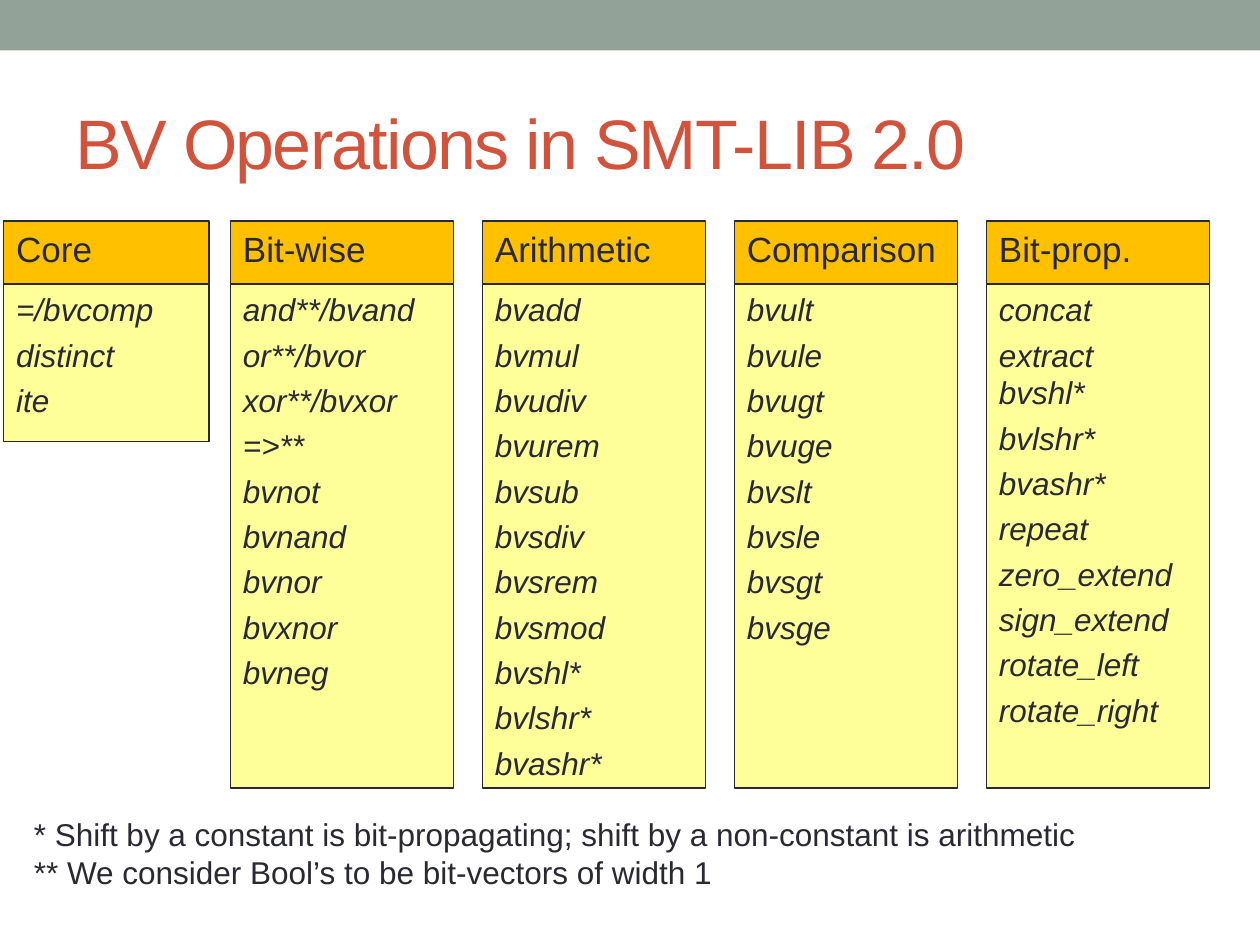
from pptx import Presentation
from pptx import util as u
from pptx.dml.color import RGBColor
from pptx.enum import shapes, text

TITLE = "BV Operations in SMT-LIB 2.0"
# heading, operations ("\v" is a line break inside a paragraph)
GROUPS = [
    ("Core", ["=/bvcomp", "distinct", "ite"]),
    ("Bit-wise", ["and**/bvand", "or**/bvor", "xor**/bvxor", "=>**", "bvnot",
                  "bvnand", "bvnor", "bvxnor", "bvneg"]),
    ("Arithmetic", ["bvadd", "bvmul", "bvudiv", "bvurem", "bvsub", "bvsdiv",
                    "bvsrem", "bvsmod", "bvshl*", "bvlshr*", "bvashr*"]),
    ("Comparison", ["bvult", "bvule", "bvugt", "bvuge", "bvslt", "bvsle",
                    "bvsgt", "bvsge"]),
    ("Bit-prop.", ["concat", "extract\vbvshl*", "bvlshr*", "bvashr*", "repeat",
                   "zero_extend", "sign_extend", "rotate_left", "rotate_right"]),
]
FOOTNOTES = ("* Shift by a constant is bit-propagating; shift by a non-constant is arithmetic\v"
             "** We consider Bool’s to be bit-vectors of width 1")

COLORS = {"band": "93A299", "title": "D2533C", "ink": "292934",
          "heading": "FFC000", "list": "FFFF99"}
WIDTH, HEIGHT = 10, 7.5
COLUMN_WIDTH, COLUMN_STEP, FIRST_COLUMN = 1.77, 2.0, -0.17
CORE_LEFT, CORE_WIDTH, CORE_HEIGHT = 0.03, 1.63, 1.25
HEADING_TOP, HEADING_HEIGHT, LIST_HEIGHT = 1.755, 0.5, 4


def color(name):
    return RGBColor.from_string(COLORS[name])


def write(shape, paragraphs, size=18, ink="ink", italic=False, before=0,
          anchor=text.MSO_ANCHOR.TOP, tracking=0):
    frame = shape.text_frame
    frame.word_wrap = True
    frame.auto_size = text.MSO_AUTO_SIZE.NONE
    frame.vertical_anchor = anchor
    for index, content in enumerate(paragraphs):
        paragraph = frame.paragraphs[0] if index == 0 else frame.add_paragraph()
        paragraph.text = content
        paragraph.alignment = text.PP_ALIGN.LEFT
        paragraph.space_before = u.Pt(before)
        for run in paragraph.runs:
            run.font.name = "Arial"
            run.font.size = u.Pt(size)
            run.font.italic = italic
            run.font.color.rgb = color(ink)
            if tracking:
                run.font._element.set("spc", str(tracking * 100))


def add_box(slide, left, top, width, height, fill, outlined=True):
    box = slide.shapes.add_shape(shapes.MSO_SHAPE.RECTANGLE,
                                 *map(u.Inches, (left, top, width, height)))
    box.shadow.inherit = False
    box.fill.solid()
    box.fill.fore_color.rgb = color(fill)
    if outlined:
        box.line.color.rgb = color("ink")
        box.line.width = u.Pt(0.75)
    else:
        box.line.fill.background()
    return box


def main():
    presentation = Presentation()
    presentation.slide_width = u.Inches(WIDTH)
    presentation.slide_height = u.Inches(HEIGHT)
    slide = presentation.slides.add_slide(presentation.slide_layouts[5])

    add_box(slide, 0, 0, WIDTH, 0.4, "band", outlined=False)

    title = slide.shapes.title
    title.left, title.top, title.width, title.height = map(u.Inches, (0.5, 0.58, 9, 1.08))
    write(title, [TITLE], size=40, ink="title", anchor=text.MSO_ANCHOR.MIDDLE, tracking=-1)

    for column, (heading, operations) in enumerate(GROUPS):
        left, width, height = FIRST_COLUMN + column * COLUMN_STEP, COLUMN_WIDTH, LIST_HEIGHT
        if column == 0:
            left, width, height = CORE_LEFT, CORE_WIDTH, CORE_HEIGHT
        header = add_box(slide, left, HEADING_TOP, width, HEADING_HEIGHT, "heading")
        write(header, [heading], size=20, before=4.8)
        listing = add_box(slide, left, HEADING_TOP + HEADING_HEIGHT, width, height, "list")
        write(listing, operations, italic=True, before=4.3)

    notes = slide.shapes.add_textbox(*map(u.Inches, (0.17, 6.42, 9.5, 0.71)))
    write(notes, [FOOTNOTES])

    presentation.save("out.pptx")


if __name__ == "__main__":
    main()
